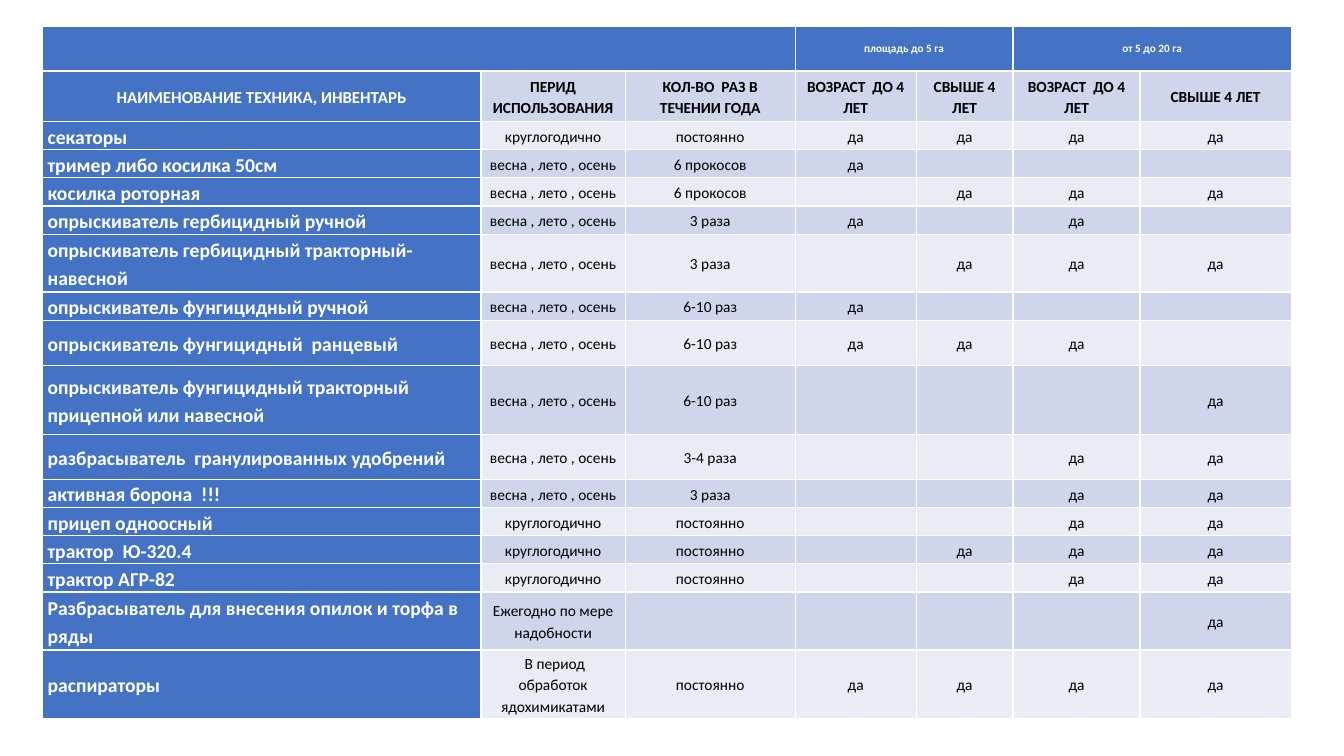
from lxml import etree
from pptx import Presentation
from pptx.dml.color import RGBColor
from pptx.enum.text import MSO_ANCHOR, PP_ALIGN
from pptx.oxml.ns import qn
from pptx.util import Cm, Pt

BLUE = RGBColor(0x44, 0x72, 0xC4)
BAND_DARK = RGBColor(0xCF, 0xD5, 0xEA)
BAND_LIGHT = RGBColor(0xE9, 0xEB, 0xF5)
WHITE = RGBColor(0xFF, 0xFF, 0xFF)
BLACK = RGBColor(0, 0, 0)
LEFT, CENTER = PP_ALIGN.LEFT, PP_ALIGN.CENTER
MIDDLE = MSO_ANCHOR.MIDDLE
FONT = "Calibri"

COL_WIDTHS = [11.05, 3.64, 4.28, 3.05, 2.44, 3.2, 3.81]
AREA_HEIGHT, HEADER_HEIGHT = 1.12, 1.27
AREAS = [(0, 2, ""), (3, 4, "площадь до 5 га"), (5, 6, "от 5 до 20 га")]
AGES = ["ВОЗРАСТ  ДО 4 ЛЕТ", "СВЫШЕ 4 ЛЕТ"]
HEADERS = ["НАИМЕНОВАНИЕ ТЕХНИКА, ИНВЕНТАРЬ", "ПЕРИД ИСПОЛЬЗОВАНИЯ",
           "КОЛ-ВО  РАЗ В ТЕЧЕНИИ ГОДА"] + AGES * 2

SEASONS = "весна , лето , осень"
ALL_YEAR = "круглогодично"
ALWAYS = "постоянно"
# Row height, machine, period, frequency, and "+" where the machine is needed
MACHINES = [
    (0.71, "секаторы", ALL_YEAR, ALWAYS, "++++"),
    (0.71, "тример либо косилка 50см", SEASONS, "6 прокосов", "+---"),
    (0.71, "косилка роторная", SEASONS, "6 прокосов", "-+++"),
    (0.71, "опрыскиватель гербицидный ручной", SEASONS, "3 раза", "+-+-"),
    (1.46, "опрыскиватель гербицидный тракторный-навесной", SEASONS, "3 раза", "-+++"),
    (0.71, "опрыскиватель фунгицидный ручной", SEASONS, "6-10 раз", "+---"),
    (1.14, "опрыскиватель фунгицидный  ранцевый", SEASONS, "6-10 раз", "+++-"),
    (1.73, "опрыскиватель фунгицидный тракторный  прицепной или навесной",
     SEASONS, "6-10 раз", "---+"),
    (1.14, "разбрасыватель  гранулированных удобрений", SEASONS, "3-4 раза", "--++"),
    (0.71, "активная борона  !!!", SEASONS, "3 раза", "--++"),
    (0.71, "прицеп одноосный", ALL_YEAR, ALWAYS, "--++"),
    (0.71, "трактор  Ю-320.4", ALL_YEAR, ALWAYS, "-+++"),
    (0.71, "трактор АГР-82", ALL_YEAR, ALWAYS, "--++"),
    (1.46, "Разбрасыватель для внесения опилок и торфа в ряды",
     "Ежегодно по мере надобности", "", "---+"),
    (1.73, "распираторы", " В период обработок ядохимикатами", ALWAYS, "++++"),
]


def fill_cell(cell, text, fill, size, color, bold=True, align=CENTER, spacing=1.15):
    cell.fill.solid()
    cell.fill.fore_color.rgb = fill
    cell.vertical_anchor = MIDDLE
    cell.margin_left = cell.margin_right = Cm(0.13)
    cell.margin_top = cell.margin_bottom = 0
    p = cell.text_frame.paragraphs[0]
    p.alignment = align
    if not text:
        # Keeps an empty cell from stretching its row
        etree.SubElement(p._p, qn("a:endParaRPr"), sz=str(size * 100))
        return
    p.text = text
    p.line_spacing = spacing
    font = p.runs[0].font
    font.name, font.size, font.bold = FONT, Pt(size), bold
    font.color.rgb = color


def fill_headers(table):
    for first, last, text in AREAS:
        for col in range(first, last + 1):
            label = text if col == first else ""
            fill_cell(table.cell(0, col), label, BLUE, 8, WHITE, spacing=1.0)
        table.cell(0, first).merge(table.cell(0, last))
    for col, text in enumerate(HEADERS):
        if col == 0:
            fill_cell(table.cell(1, col), text, BLUE, 12, WHITE)
        else:
            fill_cell(table.cell(1, col), text, BAND_DARK, 11, BLACK)


def fill_machines(table):
    for row, (_, name, period, frequency, needs) in enumerate(MACHINES, 2):
        band = BAND_DARK if row % 2 else BAND_LIGHT
        fill_cell(table.cell(row, 0), name, BLUE, 14, WHITE, align=LEFT)
        values = [period, frequency] + ["да" if n == "+" else "" for n in needs]
        for col, text in enumerate(values, 1):
            fill_cell(table.cell(row, col), text, band, 11, BLACK, bold=False)


def add_machinery_table(slide, left, top):
    heights = [AREA_HEIGHT, HEADER_HEIGHT] + [machine[0] for machine in MACHINES]
    frame = slide.shapes.add_table(len(heights), len(COL_WIDTHS), left, top,
                                   Cm(sum(COL_WIDTHS)), Cm(sum(heights)))
    table = frame.table
    table.first_col = True
    for column, width in zip(table.columns, COL_WIDTHS):
        column.width = Cm(width)
    for row, height in zip(table.rows, heights):
        row.height = Cm(height)
    fill_headers(table)
    fill_machines(table)


def main():
    prs = Presentation()
    prs.slide_width, prs.slide_height = Cm(33.87), Cm(19.05)
    slide = prs.slides.add_slide(prs.slide_layouts[6])
    add_machinery_table(slide, Cm(1.07), Cm(0.67))
    prs.save("out.pptx")


if __name__ == "__main__":
    main()
